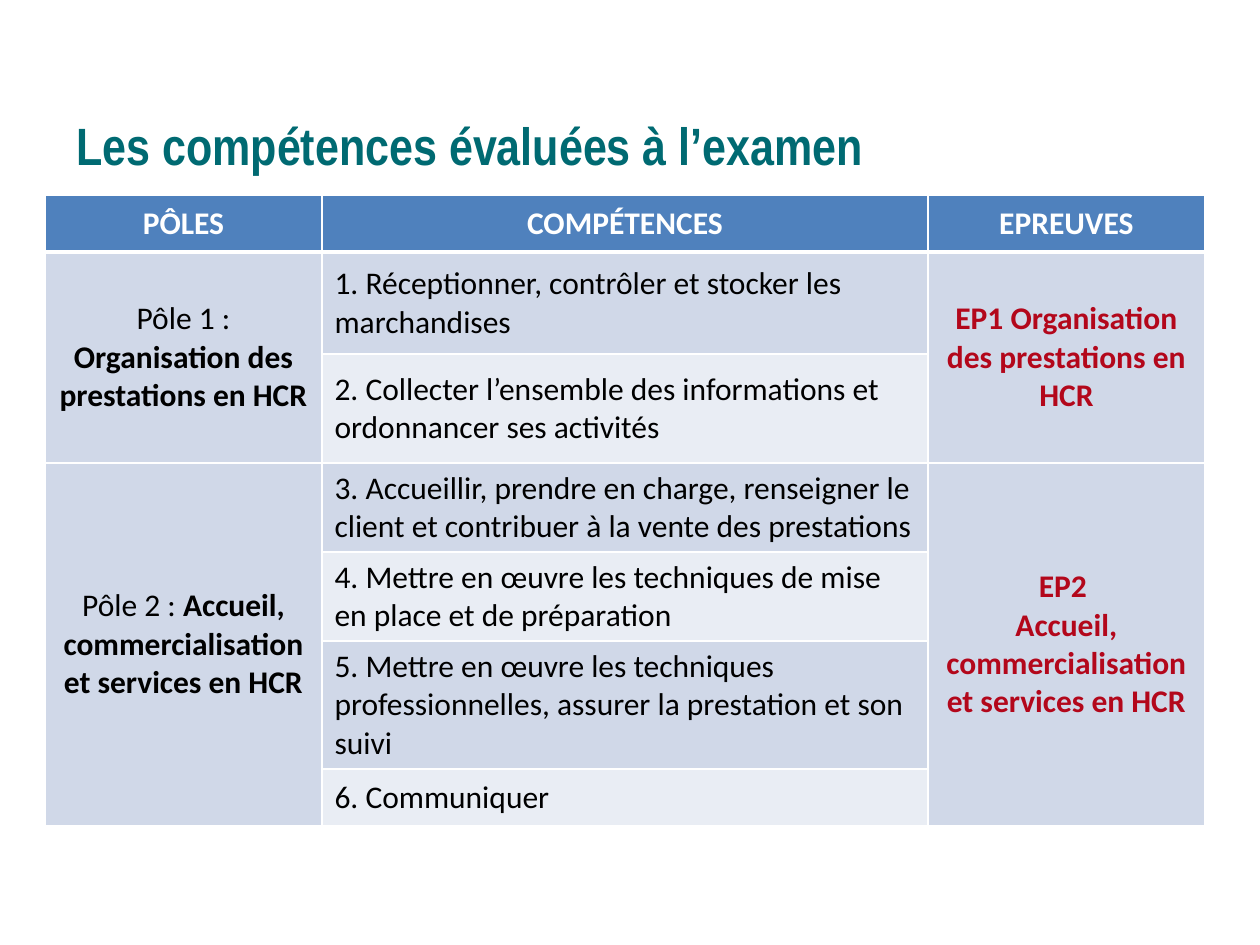
import pptx
import pptx.util
import pptx.dml.color
import pptx.enum.text
import pptx.oxml.ns
import lxml.etree

PIXEL = 914400 // 126
ALIGN = pptx.enum.text.PP_ALIGN
MIDDLE = pptx.enum.text.MSO_ANCHOR.MIDDLE

THEME = {
    "title": {"name": "Arial Narrow", "size": 30, "bold": True, "color": "006A72"},
    "header": {"name": "Calibri", "size": 18, "bold": True, "color": "FFFFFF"},
    "plain": {"name": "Calibri", "size": 18, "bold": False, "color": "000000"},
    "strong": {"name": "Calibri", "size": 18, "bold": True, "color": "000000"},
    "exam": {"name": "Calibri", "size": 18, "bold": True, "color": "B3071B"},
    "header_fill": "4F81BD",
    "bands": ("D0D8E8", "E9EDF4"),
    "border": "FFFFFF",
}

TITLE = "Les compétences évaluées à l’examen"
HEADERS = ("PÔLES", "COMPÉTENCES", "EPREUVES")
# Each pole: its number label, its name, its skills, the lines of its exam
POLES = (
    ("Pôle 1 : ", "Organisation des prestations en HCR",
     ("1. Réceptionner, contrôler et stocker les marchandises",
      "2. Collecter l’ensemble des informations et ordonnancer ses activités"),
     ("EP1 Organisation des prestations en HCR",)),
    ("Pôle 2 : ", "Accueil, commercialisation et services en HCR",
     ("3. Accueillir, prendre en charge, renseigner le client et contribuer "
      "à la vente des prestations",
      "4. Mettre en œuvre les techniques de mise en place et de préparation",
      "5. Mettre en œuvre les techniques professionnelles, assurer la "
      "prestation et son suivi",
      "6. Communiquer"),
     ("EP2 ", "Accueil, commercialisation et services en HCR")),
)
COLUMN_WIDTHS = (277, 606, 277)
ROW_HEIGHTS = (57, 102, 109, 89, 89, 128, 57)


def px(length):
    return pptx.util.Emu(length * PIXEL)


def color(value):
    return pptx.dml.color.RGBColor.from_string(value)


def add_run(paragraph, text, style):
    run = paragraph.add_run()
    run.text = text
    values = {**THEME[style], "size": pptx.util.Pt(THEME[style]["size"])}
    run.font.color.rgb = color(values.pop("color"))
    for name, value in values.items():
        setattr(run.font, name, value)


def add_border(cell, side, points):
    line = lxml.etree.SubElement(
        cell._tc.get_or_add_tcPr(), pptx.oxml.ns.qn("a:" + side),
        w=str(pptx.util.Pt(points)))
    fill = lxml.etree.SubElement(line, pptx.oxml.ns.qn("a:solidFill"))
    lxml.etree.SubElement(fill, pptx.oxml.ns.qn("a:srgbClr"), val=THEME["border"])


def format_cell(cell, fill, bottom=1):
    # Borders come before the fill in the cell properties
    for side, points in (("lnL", 1), ("lnR", 1), ("lnT", 1), ("lnB", bottom)):
        add_border(cell, side, points)
    cell.fill.solid()
    cell.fill.fore_color.rgb = color(fill)
    cell.vertical_anchor = MIDDLE


def write_cell(cell, paragraphs, alignment=ALIGN.CENTER):
    """Each paragraph is a list of (text, style) runs."""
    for index, runs in enumerate(paragraphs):
        frame = cell.text_frame
        paragraph = frame.add_paragraph() if index else frame.paragraphs[0]
        paragraph.alignment = alignment
        for text, style in runs:
            add_run(paragraph, text, style)


def add_title(slide, left, top, width, height):
    frame = slide.shapes.add_textbox(px(left), px(top), px(width), px(height)).text_frame
    settings = {"word_wrap": True, "vertical_anchor": MIDDLE,
                "margin_top": 0, "margin_bottom": 0}
    for name, value in settings.items():
        setattr(frame, name, value)
    paragraph = frame.paragraphs[0]
    paragraph.line_spacing = pptx.util.Pt(33)
    add_run(paragraph, TITLE, "title")


def add_skills_table(slide, left, top):
    table = slide.shapes.add_table(
        len(ROW_HEIGHTS), len(COLUMN_WIDTHS), px(left), px(top),
        px(sum(COLUMN_WIDTHS)), px(sum(ROW_HEIGHTS))).table
    for column, width in zip(table.columns, COLUMN_WIDTHS):
        column.width = px(width)
    for row, height in zip(table.rows, ROW_HEIGHTS):
        row.height = px(height)

    # Header row
    for index, text in enumerate(HEADERS):
        format_cell(table.cell(0, index), THEME["header_fill"], bottom=3)
        write_cell(table.cell(0, index), [[(text, "header")]])

    # One block of rows for each pole, with merged outer cells
    first = 1
    for label, name, skills, exam in POLES:
        last = first + len(skills) - 1
        for index, skill in enumerate(skills):
            row = first + index
            for column in range(3):
                band = index % 2 if column == 1 else 0
                format_cell(table.cell(row, column), THEME["bands"][band])
            write_cell(table.cell(row, 1), [[(skill, "plain")]], ALIGN.LEFT)
        for column in (0, 2):
            table.cell(first, column).merge(table.cell(last, column))
        write_cell(table.cell(first, 0), [[(label, "plain"), (name, "strong")]])
        write_cell(table.cell(first, 2), [[(line, "exam")] for line in exam])
        first = last + 1


def main():
    presentation = pptx.Presentation()
    presentation.slide_width = px(1260)
    presentation.slide_height = px(945)
    slide = presentation.slides.add_slide(presentation.slide_layouts[6])
    add_title(slide, 64, 76, 1134, 142)
    add_skills_table(slide, 45, 195)
    presentation.save("out.pptx")


if __name__ == "__main__":
    main()
